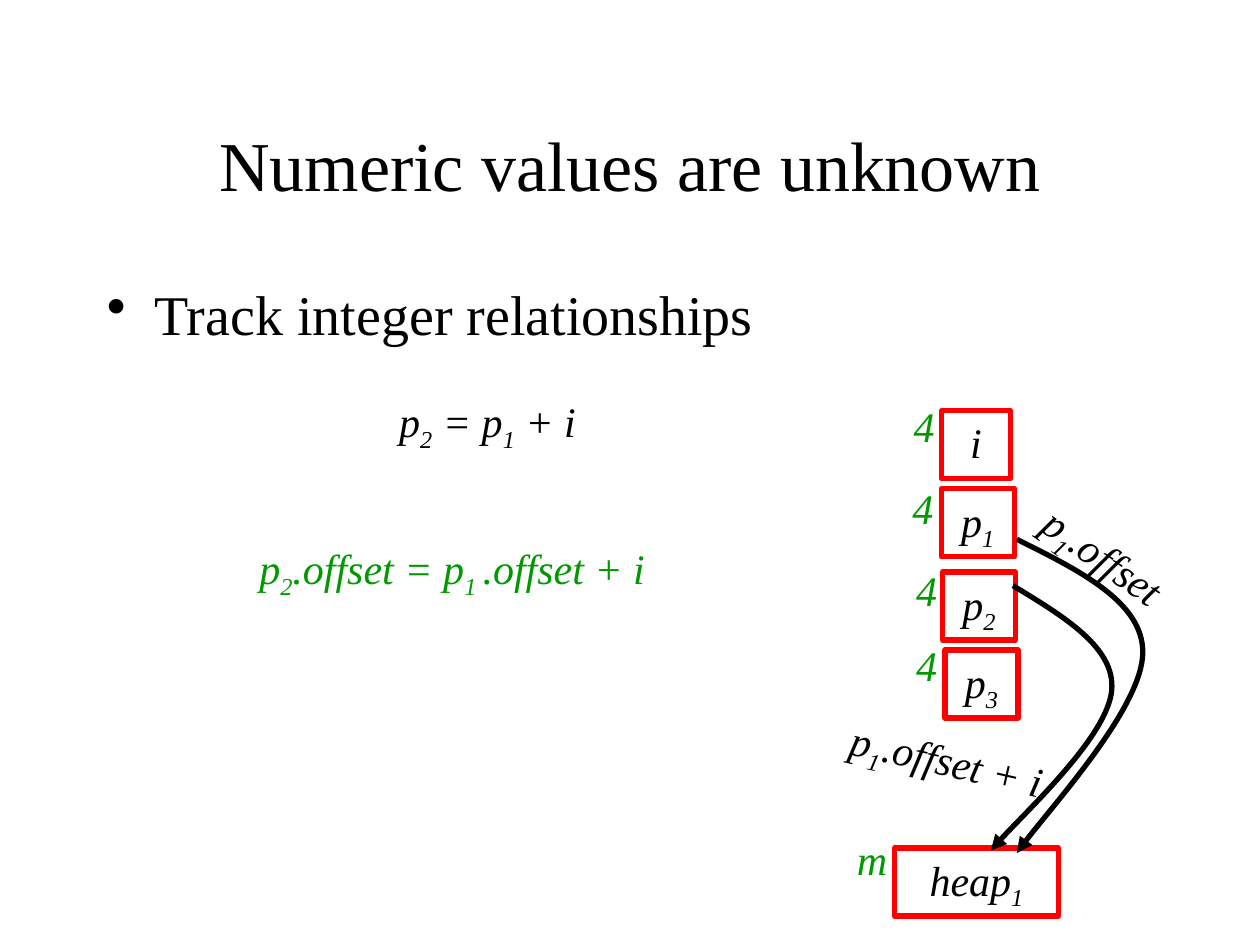
from lxml.etree import SubElement
from pptx import Presentation
from pptx.dml.color import RGBColor
from pptx.enum.shapes import MSO_SHAPE
from pptx.enum.text import MSO_ANCHOR, PP_ALIGN
from pptx.oxml.ns import qn
from pptx.util import Inches, Pt

COLORS = {"text": "000000", "size": "009900", "border": "FF0000"}
FONT = "Times New Roman"

# In every text, the parts between bars are subscripts.
TITLE = "Numeric values are unknown"
BULLET = "Track integer relationships"
# text, left, top, width, height, colour
FORMULAS = [
    ("p|2| = p|1| + i", 3.07, 3.09, 2.88, 0.6, "text"),
    ("p|2|.offset = p|1 |.offset + i", 1.96, 4.26, 4.34, 0.6, "size"),
]
# text, left, top, width
CELL_HEIGHT = 0.54
CELLS = [
    ("i", 7.47, 3.26, 0.55),
    ("p|1", 7.47, 3.88, 0.58),
    ("p|2", 7.48, 4.54, 0.58),
    ("p|3", 7.5, 5.16, 0.58),
    ("heap|1", 7.1, 6.73, 1.3),
]
# text, left, top, width, rotation
LABEL_HEIGHT = 0.5
SIZES = [
    ("4", 7.15, 3.13, 0.37, 0),
    ("4", 7.14, 3.78, 0.37, 0),
    ("4", 7.17, 4.43, 0.37, 0),
    ("4", 7.17, 5.03, 0.37, 0),
    ("m", 6.7, 6.57, 0.44, 0),
]
OFFSETS = [
    ("p|1|.offset", 8.12, 4.16, 1.28, 35.2),
    ("p|1|.offset + i", 6.63, 5.78, 1.77, 12.9),
]
# left, top, width, height, rotation
POINTERS = [
    (7.95, 4.68, 0.85, 2.11, 4.8),
    (8.07, 4.28, 1, 2.49, 0),
]
# Start, then two control points and an end for each curve, as shares of the size
POINTER_CURVE = [(0, 0), (0.5, 0.1), (1, 0.2), (1, 0.36),
                 (1, 0.53), (0.17, 0.9), (0, 1)]


def write_text(shape, text, size=24, color="text", italic=True, align=PP_ALIGN.CENTER,
               anchor=MSO_ANCHOR.TOP, wrap=True, hanging=0, bullet=None):
    frame = shape.text_frame
    frame.word_wrap = wrap
    frame.vertical_anchor = anchor
    paragraph = frame.paragraphs[0]
    paragraph.alignment = align
    properties = paragraph._p.get_or_add_pPr()
    if hanging:
        properties.set("marL", str(Inches(hanging)))
        properties.set("indent", str(-Inches(hanging)))
    if bullet:
        SubElement(properties, qn("a:buChar")).set("char", bullet)
    for index, part in enumerate(text.split("|")):
        run = paragraph.add_run()
        run.text = part
        run.font.name = FONT
        run.font.size = Pt(size)
        run.font.italic = italic
        run.font.color.rgb = RGBColor.from_string(COLORS[color])
        if index % 2:
            run.font._element.set("baseline", "-25000")


def add_text(slide, text, left, top, width, height, rotation=0, **text_format):
    shape = slide.shapes.add_textbox(*map(Inches, (left, top, width, height)))
    shape.rotation = rotation
    write_text(shape, text, **text_format)


def style_outline(shape, color):
    shape.shadow.inherit = False
    shape.fill.background()
    shape.line.color.rgb = RGBColor.from_string(COLORS[color])
    shape.line.width = Pt(3)


def add_cell(slide, text, left, top, width):
    shape = slide.shapes.add_shape(
        MSO_SHAPE.RECTANGLE, *map(Inches, (left, top, width, CELL_HEIGHT)))
    style_outline(shape, "border")
    write_text(shape, text)


def add_pointer(slide, left, top, width, height, rotation):
    """Draw a curved arrow, turning each three line points into one Bezier curve."""
    points = [(Inches(left + x * width), Inches(top + y * height))
              for x, y in POINTER_CURVE]
    builder = slide.shapes.build_freeform(*points[0])
    builder.add_line_segments(points[1:], close=False)
    shape = builder.convert_to_shape()
    outline = next(shape._element.iter(qn("a:path")))
    segments = outline.findall(qn("a:lnTo"))
    for start in range(0, len(segments), 3):
        curve = SubElement(outline, qn("a:cubicBezTo"))
        for segment in segments[start:start + 3]:
            curve.append(segment[0])
            outline.remove(segment)
    style_outline(shape, "text")
    SubElement(shape.line._get_or_add_ln(), qn("a:tailEnd")).set("type", "triangle")
    shape.rotation = rotation


def main():
    presentation = Presentation()
    presentation.slide_width, presentation.slide_height = Inches(10), Inches(7.5)
    slide = presentation.slides.add_slide(presentation.slide_layouts[6])

    add_text(slide, TITLE, 0.75, 0.67, 8.5, 1.25, size=40, italic=False,
             anchor=MSO_ANCHOR.MIDDLE)
    add_text(slide, BULLET, 0.75, 2.17, 8.5, 2.82, size=32, italic=False,
             align=PP_ALIGN.LEFT, hanging=0.38, bullet="•")
    for *content, color in FORMULAS:
        add_text(slide, *content, color=color, align=PP_ALIGN.LEFT, hanging=0.5)
    for cell in CELLS:
        add_cell(slide, *cell)
    for labels, color in ((SIZES, "size"), (OFFSETS, "text")):
        for text, left, top, width, rotation in labels:
            add_text(slide, text, left, top, width, LABEL_HEIGHT, rotation,
                     color=color, wrap=False)
    for pointer in POINTERS:
        add_pointer(slide, *pointer)

    presentation.save("out.pptx")


if __name__ == "__main__":
    main()
